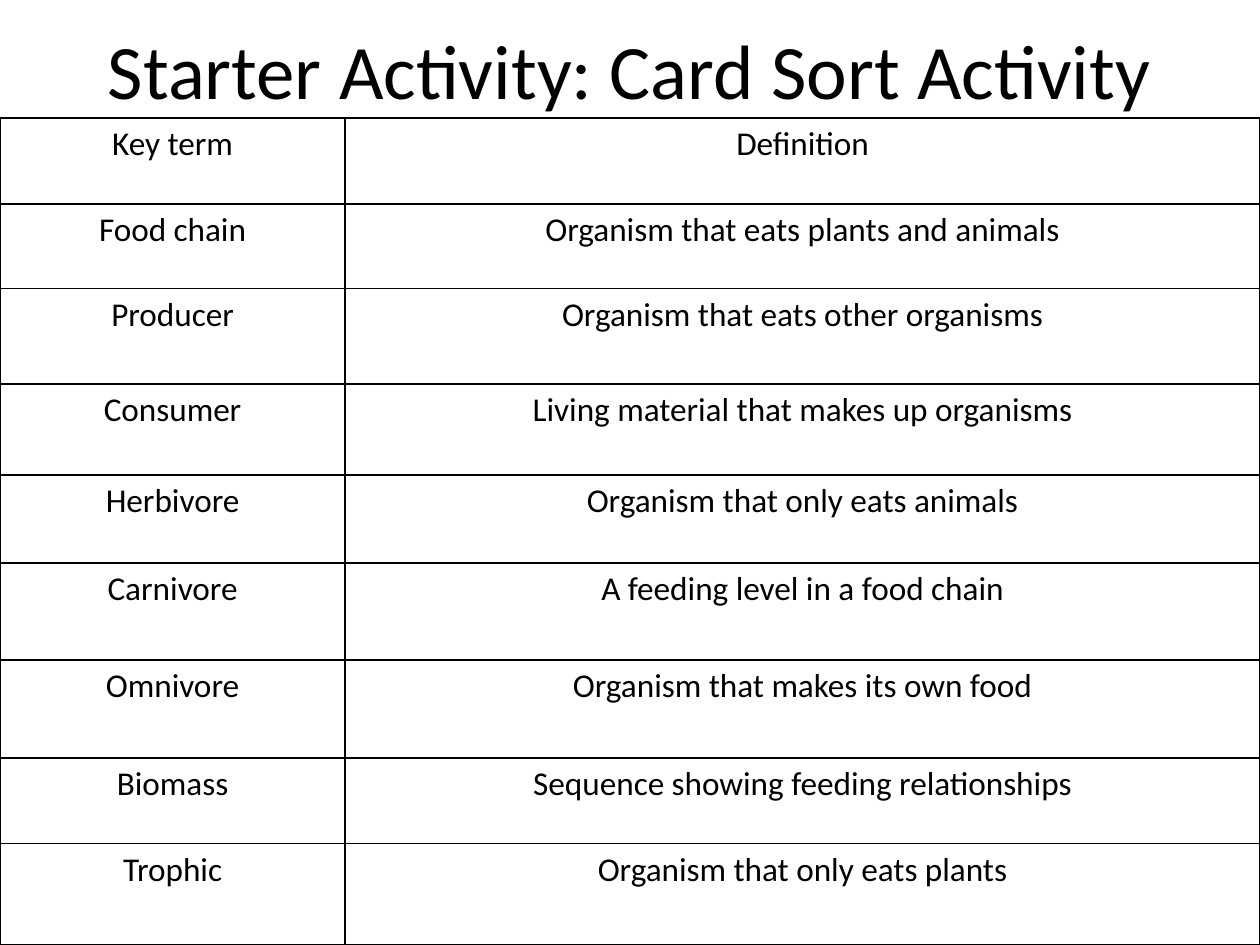
"""Build the card sort starter slide with its table of key terms and definitions."""
import pptx
import pptx.dml.color
import pptx.enum.text
import pptx.oxml.ns
import pptx.util
from lxml import etree

Pt = pptx.util.Pt
FONT = "Calibri"
COLOURS = {"ink": "000000", "paper": "FFFFFF"}
COLUMN_WIDTHS = (197.25, 522.75)
ROW_HEIGHTS = (49, 48.5, 54.5, 52, 50.25, 55.5, 56, 49, 57.5)
CARDS = (
    ("Key term", "Definition"),
    ("Food chain", "Organism that eats plants and animals"),
    ("Producer", "Organism that eats other organisms"),
    ("Consumer", "Living material that makes up organisms"),
    ("Herbivore", "Organism that only eats animals"),
    ("Carnivore", "A feeding level in a food chain"),
    ("Omnivore", "Organism that makes its own food"),
    ("Biomass", "Sequence showing feeding relationships"),
    ("Trophic", "Organism that only eats plants"),
)


def colour(name):
    """Return the named colour."""
    return pptx.dml.color.RGBColor.from_string(COLOURS[name])


def write_centred(frame, text, size, line_spacing=1.0):
    """Write one centred paragraph into a text frame."""
    para = frame.paragraphs[0]
    para.alignment = pptx.enum.text.PP_ALIGN.CENTER
    para.line_spacing = line_spacing
    span = para.add_run()
    span.text = text
    span.font.name = FONT
    span.font.size = Pt(size)
    span.font.color.rgb = colour("ink")


def add_title(page, text):
    """Add the slide title."""
    box = page.shapes.add_textbox(Pt(36), Pt(-5.75), Pt(648), Pt(90))
    frame = box.text_frame
    frame.word_wrap = True
    frame.vertical_anchor = pptx.enum.text.MSO_ANCHOR.MIDDLE
    write_centred(frame, text, 44)


def outline_cell(cell, width):
    """Draw a solid line on all four sides of a cell."""
    properties = cell._tc.get_or_add_tcPr()
    qualified = pptx.oxml.ns.qn
    for side in ("lnL", "lnR", "lnT", "lnB"):
        line = etree.SubElement(properties, qualified(f"a:{side}"), w=str(Pt(width)))
        fill = etree.SubElement(line, qualified("a:solidFill"))
        etree.SubElement(fill, qualified("a:srgbClr"), val=COLOURS["ink"])


def fill_cell(cell, text):
    """Set the margins, borders, fill and text of one cell."""
    cell.margin_left = cell.margin_right = Pt(4.5)
    cell.margin_top = cell.margin_bottom = Pt(0)
    outline_cell(cell, 1)
    cell.fill.solid()
    cell.fill.fore_color.rgb = colour("paper")
    write_centred(cell.text_frame, text, 19, 1.15)


def add_card_table(page):
    """Add the table of key terms and definitions."""
    table = page.shapes.add_table(
        len(CARDS), len(COLUMN_WIDTHS), Pt(0), Pt(67.5),
        Pt(sum(COLUMN_WIDTHS)), Pt(sum(ROW_HEIGHTS)),
    ).table
    table.first_row = table.horz_banding = False
    for column, width in zip(table.columns, COLUMN_WIDTHS):
        column.width = Pt(width)
    for row, height, card in zip(table.rows, ROW_HEIGHTS, CARDS):
        row.height = Pt(height)
        for cell, text in zip(row.cells, card):
            fill_cell(cell, text)


def main():
    """Build and save the deck."""
    deck = pptx.Presentation()
    deck.slide_width, deck.slide_height = Pt(720), Pt(540)
    page = deck.slides.add_slide(deck.slide_layouts[6])
    add_title(page, "Starter Activity: Card Sort Activity")
    add_card_table(page)
    deck.save("out.pptx")


if __name__ == "__main__":
    main()
